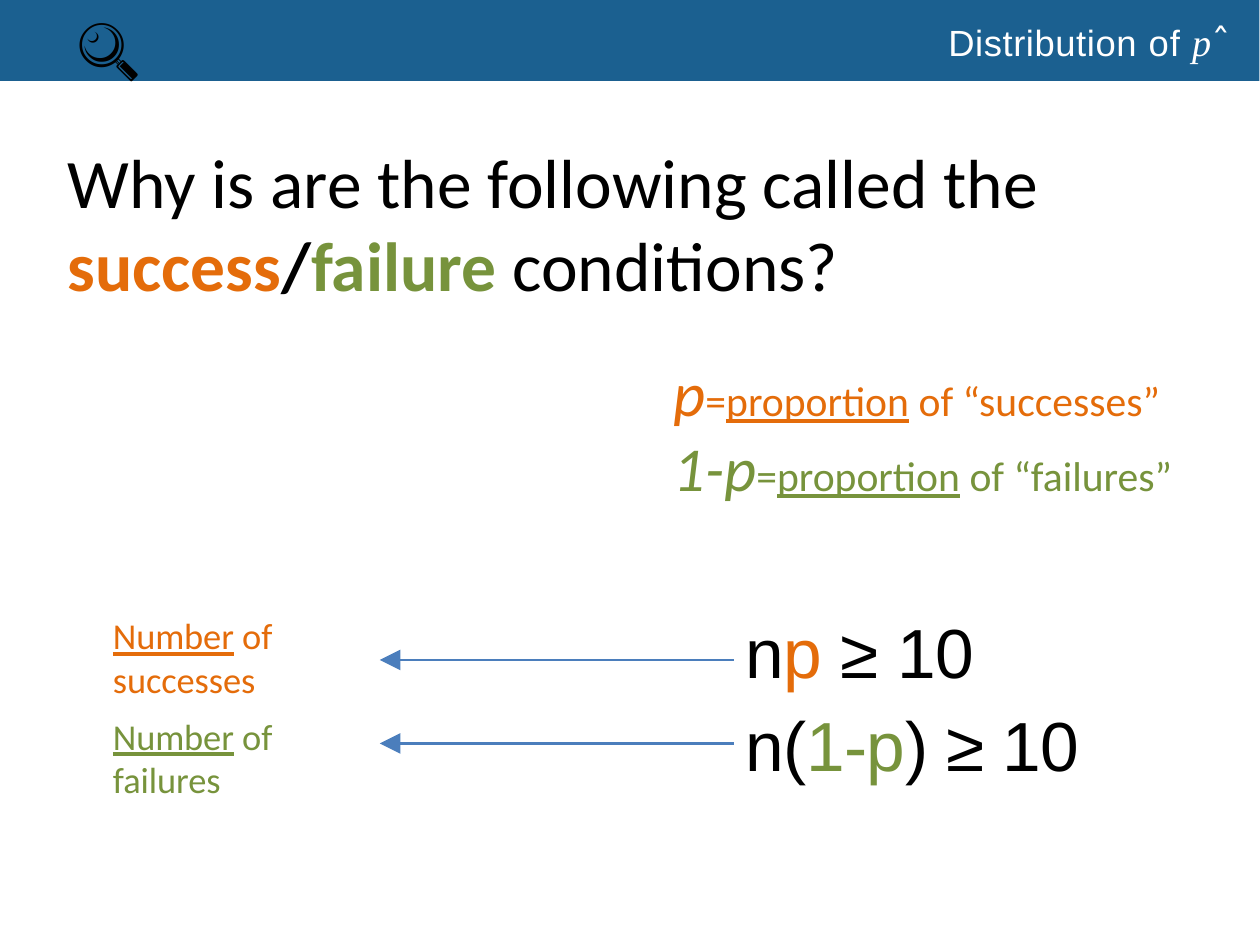
from dataclasses import dataclass

from lxml import etree
from pptx import Presentation
from pptx.dml.color import RGBColor
from pptx.enum.shapes import MSO_CONNECTOR, MSO_SHAPE
from pptx.enum.text import MSO_ANCHOR, MSO_AUTO_SIZE, PP_ALIGN
from pptx.oxml.ns import qn
from pptx.shapes.autoshape import Shape
from pptx.slide import Slide
from pptx.text.text import TextFrame
from pptx.util import Emu, Inches, Pt

STRAIGHT = MSO_CONNECTOR.STRAIGHT
RECTANGLE = MSO_SHAPE.RECTANGLE
TOP = MSO_ANCHOR.TOP
NO_FIT = MSO_AUTO_SIZE.NONE
RIGHT = PP_ALIGN.RIGHT

SLIDE_WIDTH, SLIDE_HEIGHT = Pt(363), Pt(272.5)
COLUMNS, ROWS = 100, 75
COLORS = {
    "band": "1B6090",
    "title": "FFFFFF",
    "text": "000000",
    "success": "E46C0A",
    "failure": "77933C",
    "arrow": "4B7EBC",
}


@dataclass(frozen=True)
class Area:
    """A rectangle in grid columns and rows."""
    column: float
    row: float
    columns: float
    rows: float


@dataclass(frozen=True)
class Span:
    """A stretch of text in one format; spacing is in points."""
    text: str
    size: float
    color: str = "text"
    font: str = "Calibri"
    bold: bool = False
    italic: bool = False
    underline: bool = False
    spacing: float = 0


@dataclass(frozen=True)
class Outcome:
    color: str
    symbol: str
    proportion_of: str
    count_lines: tuple[str, ...]
    condition: tuple[str, str]
    arrow_row: float


OUTCOMES = [
    Outcome("success", "p", " of “successes”", (" of successes",),
            ("n", " ≥ 10"), 52.32),
    Outcome("failure", "1-p", " of “failures”", (" of", "failures"),
            ("n(", ") ≥ 10"), 58.95),
]


def across(columns: float) -> Emu:
    return Emu(round(SLIDE_WIDTH * columns / COLUMNS))


def down(rows: float) -> Emu:
    return Emu(round(SLIDE_HEIGHT * rows / ROWS))


def place(shape: Shape, area: Area) -> None:
    shape.left, shape.top = across(area.column), down(area.row)
    shape.width, shape.height = across(area.columns), down(area.rows)


def write(frame: TextFrame, lines: list[list[Span]], wrap: bool = True) -> None:
    frame.word_wrap = wrap
    frame.auto_size = NO_FIT
    frame.vertical_anchor = TOP
    frame.text = "\n" * (len(lines) - 1)
    for paragraph, spans in zip(frame.paragraphs, lines):
        for span in spans:
            run = paragraph.add_run()
            run.text = span.text
            font = run.font
            font.name, font.size = span.font, Pt(span.size)
            font.bold, font.italic = span.bold, span.italic
            font.underline = span.underline
            font.color.rgb = RGBColor.from_string(COLORS[span.color])
            if span.spacing:
                run._r.get_or_add_rPr().set("spc", str(round(span.spacing * 100)))


def add_text(slide: Slide, area: Area, lines: list[list[Span]],
             wrap: bool = True) -> TextFrame:
    box = slide.shapes.add_textbox(0, 0, 0, 0)
    place(box, area)
    write(box.text_frame, lines, wrap)
    return box.text_frame


def add_header(slide: Slide) -> None:
    band = slide.shapes.add_shape(RECTANGLE, 0, 0, across(99.96), down(6.42))
    band.shadow.inherit = False
    band.fill.solid()
    band.fill.fore_color.rgb = RGBColor.from_string(COLORS["band"])
    band.line.fill.background()
    slide.shapes._spTree.insert(2, band._element)

    title = slide.shapes.title
    place(title, Area(5.04, 1.25, 92.63, 8.32))
    frame = title.text_frame
    write(frame, [[
        Span("Distribution ", 10.5, "title", "Arial", spacing=0.2),
        Span("of ", 10.5, "title", "Arial", spacing=0.3),
        Span("p", 11, "title", "Times New Roman", italic=True, spacing=-3.5),
        Span("ˆ", 11, "title", "DejaVu Sans", spacing=-3.5),
    ]])
    frame.margin_left = frame.margin_right = frame.margin_bottom = 0
    frame.margin_top = Inches(0.01)
    frame.paragraphs[0].alignment = RIGHT
    frame.paragraphs[0].space_before = Pt(0.9)
    add_text(slide, Area(4.17, -0.32, 8.93, 7.93), [[Span("🔍", 18)]], wrap=False)


def add_arrow(slide: Slide, row: float) -> None:
    arrow = slide.shapes.add_connector(
        STRAIGHT, across(58.25), down(row), across(30.15), down(row))
    arrow.line.color.rgb = RGBColor.from_string(COLORS["arrow"])
    arrow.line.width = Pt(0.75)
    etree.SubElement(arrow.line._get_or_add_ln(), qn("a:tailEnd"), type="triangle")
    etree.SubElement(arrow._element.spPr, qn("a:effectLst"))


def condition_line(outcome: Outcome) -> list[Span]:
    before, after = outcome.condition
    parts = [(before, "text"), (outcome.symbol, outcome.color), (after, "text")]
    return [Span(text, 20, color, "Arial", spacing=-0.2) for text, color in parts]


def proportion_line(outcome: Outcome) -> list[Span]:
    return [
        Span(outcome.symbol, 18, outcome.color, italic=True),
        Span("=", 12, outcome.color),
        Span("proportion", 12, outcome.color, underline=True),
        Span(outcome.proportion_of, 12, outcome.color),
    ]


def count_lines(outcome: Outcome) -> list[list[Span]]:
    lines = [[Span(text, 10.5, outcome.color)] for text in outcome.count_lines]
    lines[0].insert(0, Span("Number", 10.5, outcome.color, underline=True))
    return lines


def main() -> None:
    deck = Presentation()
    deck.slide_width, deck.slide_height = SLIDE_WIDTH, SLIDE_HEIGHT
    slide = deck.slides.add_slide(deck.slide_layouts.get_by_name("Title Only"))

    add_header(slide)
    add_text(slide, Area(3.4, 10.05, 97.98, 15.26), [[
        Span("Why is are the following called the ", 20),
        Span("success", 20, "success", bold=True),
        Span("/", 20, bold=True),
        Span("failure", 20, "failure", bold=True),
        Span(" conditions?", 20),
    ]])

    conditions = add_text(slide, Area(34.57, 47.28, 63.27, 16.25),
                          [condition_line(outcome) for outcome in OUTCOMES])
    for paragraph in conditions.paragraphs:
        paragraph.level = 2
        paragraph.space_before = Pt(3)
        properties = paragraph._p.get_or_add_pPr()
        properties.set("marL", str(Inches(1.14)))
        properties.set("indent", "0")

    for index, outcome in enumerate(OUTCOMES):
        add_arrow(slide, outcome.arrow_row)
        add_text(slide, Area(7.02, 47.68 + 7.93 * index, 26.38, 9.13),
                 count_lines(outcome))
    add_text(slide, Area(51.5, 27.07, 56.33, 18.03),
             [proportion_line(outcome) for outcome in OUTCOMES])

    deck.save("out.pptx")


if __name__ == "__main__":
    main()
